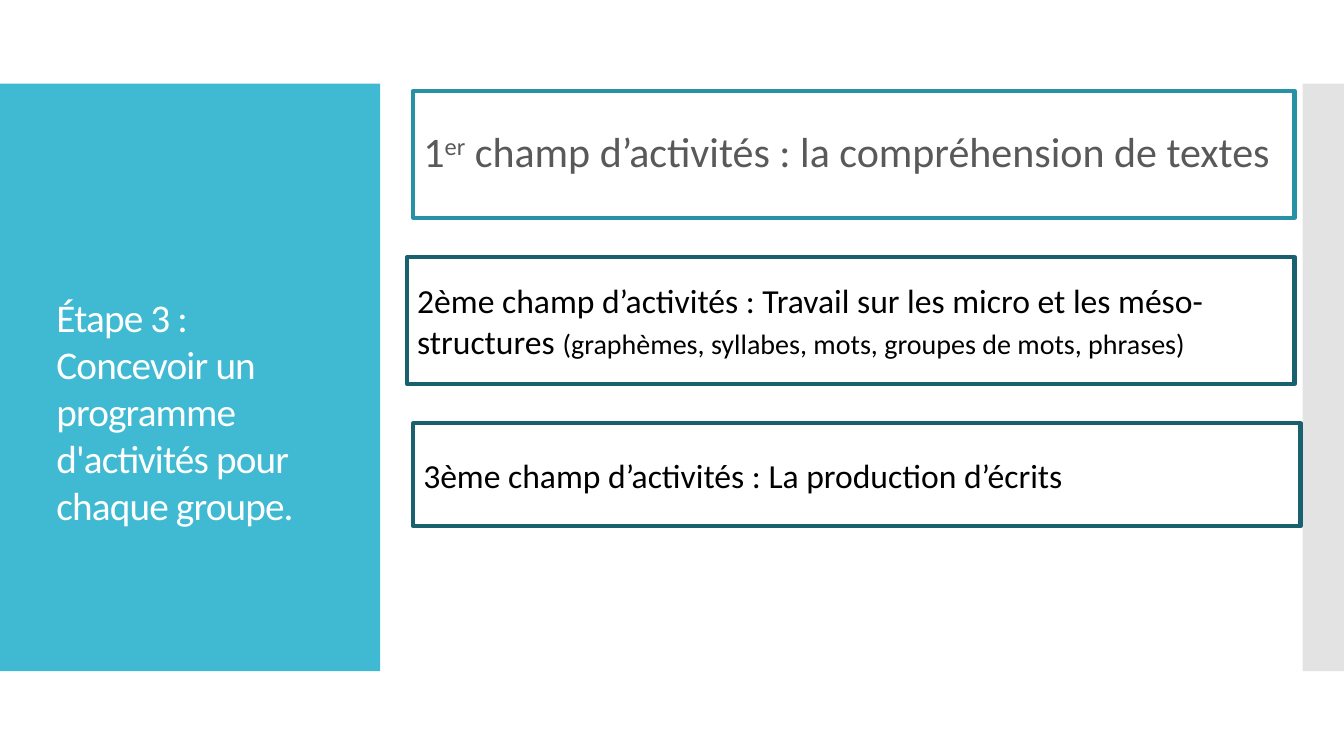
from dataclasses import dataclass

import pptx
import pptx.dml.color
import pptx.enum.shapes
import pptx.enum.text
import pptx.oxml.ns
import pptx.util
from lxml import etree

Inches = pptx.util.Inches
Pt = pptx.util.Pt
Anchor = pptx.enum.text.MSO_ANCHOR
AutoSize = pptx.enum.text.MSO_AUTO_SIZE
qn = pptx.oxml.ns.qn


@dataclass(frozen=True)
class Theme:
    font: str = "Calibri"
    panel: str = "40BAD2"
    edge: str = "C8C8C8"
    first_border: str = "2791A6"
    border: str = "1A616F"
    first_text: str = "595959"
    text: str = "000000"
    title_text: str = "FFFFFF"
    title_size: int = 28
    first_size: int = 30
    field_size: int = 24
    detail_size: int = 20
    border_width: int = 3


def apply_format(target, values):
    for name, value in values.items():
        setattr(target, name, value)


class SlideBuilder:
    def __init__(self, slide, theme):
        self.slide = slide
        self.theme = theme

    def rectangle(self, box):
        shape = self.slide.shapes.add_shape(
            pptx.enum.shapes.MSO_SHAPE.RECTANGLE, *map(Inches, box))
        shape.shadow.inherit = False
        return shape

    def panel(self, box, color, opacity=100):
        shape = self.rectangle(box)
        shape.fill.solid()
        shape.fill.fore_color.rgb = pptx.dml.color.RGBColor.from_string(color)
        shape.line.fill.background()
        if opacity < 100:
            tint = shape.element.spPr.find(".//" + qn("a:srgbClr"))
            etree.SubElement(tint, qn("a:alpha"), val=str(opacity * 1000))

    def placeholder(self, shape, box):
        """Move a placeholder to its box and in front of everything so far."""
        apply_format(shape, dict(zip(("left", "top", "width", "height"), map(Inches, box))))
        shape.element.getparent().append(shape.element)
        return shape

    def border(self, shape, color):
        shape.fill.background()
        shape.line.color.rgb = pptx.dml.color.RGBColor.from_string(color)
        shape.line.width = Pt(self.theme.border_width)

    def fill_text(self, shape, runs, color, frame_format, paragraph_format=None):
        """Fill a shape with runs of (text, size, extra run attributes)."""
        frame = shape.text_frame
        apply_format(frame, {"word_wrap": True, "auto_size": AutoSize.NONE, **frame_format})
        paragraph = frame.paragraphs[0]
        apply_format(paragraph, {"alignment": pptx.enum.text.PP_ALIGN.LEFT,
                                 **(paragraph_format or {})})
        for text, size, extras in runs:
            run = paragraph.add_run()
            run.text = text
            apply_format(run.font, {"name": self.theme.font, "size": Pt(size)})
            run.font.color.rgb = pptx.dml.color.RGBColor.from_string(color)
            properties = run._r.get_or_add_rPr()
            for key, value in extras.items():
                properties.set(key, value)
        return paragraph

    def title(self, box, text):
        shape = self.placeholder(self.slide.shapes.title, box)
        self.fill_text(shape, [(text, self.theme.title_size, {"spc": "-60"})],
                       self.theme.title_text,
                       {"vertical_anchor": Anchor.TOP,
                        "auto_size": AutoSize.SHAPE_TO_FIT_TEXT})

    def first_field(self, box, runs):
        shape = self.placeholder(self.slide.placeholders[1], box)
        self.border(shape, self.theme.first_border)
        paragraph = self.fill_text(shape, runs, self.theme.first_text,
                                   {"vertical_anchor": Anchor.MIDDLE},
                                   {"line_spacing": 0.9, "space_before": Pt(12)})
        # No bullet and no hanging indent
        properties = paragraph._p.get_or_add_pPr()
        properties.set("marL", "0")
        properties.set("indent", "0")
        etree.SubElement(properties, qn("a:buNone"))

    def field(self, box, runs):
        shape = self.rectangle(box)
        self.border(shape, self.theme.border)
        self.fill_text(shape, runs, self.theme.text, {"vertical_anchor": Anchor.MIDDLE})


def main():
    presentation = pptx.Presentation()
    apply_format(presentation, {"slide_width": Inches(13.33), "slide_height": Inches(7.5)})
    theme = Theme()
    builder = SlideBuilder(
        presentation.slides.add_slide(presentation.slide_layouts[1]), theme)

    # Side panels
    panel_top, panel_height = 0.83, 5.83
    builder.panel((0, panel_top, 3.77, panel_height), theme.panel)
    builder.panel((12.92, panel_top, 0.41, panel_height), theme.edge, opacity=50)

    # Fields of activity, evenly spaced
    first_top, second_top, third_top = (0.9 + 1.65 * row for row in range(3))
    builder.first_field((4.1, first_top, 8.74, 1.26), [
        ("1", theme.first_size, {}),
        ("er", theme.first_size, {"baseline": "30000"}),
        (" champ d’activités : la compréhension de textes", theme.first_size, {}),
    ])
    builder.field((4.04, second_top, 8.8, 1.26), [
        ("2ème champ d’activités : Travail sur les micro et les méso-structures ",
         theme.field_size, {}),
        ("(graphèmes, syllabes, mots, groupes de mots, phrases)", theme.detail_size, {}),
    ])
    builder.field((4.1, third_top, 8.8, 1.02), [
        ("3ème champ d’activités : La production d’écrits", theme.field_size, {}),
    ])

    # Step title
    builder.title((0.46, 2.86, 2.84, 2.46),
                  "Étape 3 : Concevoir un programme d'activités pour chaque groupe.")

    presentation.save("out.pptx")


if __name__ == "__main__":
    main()
